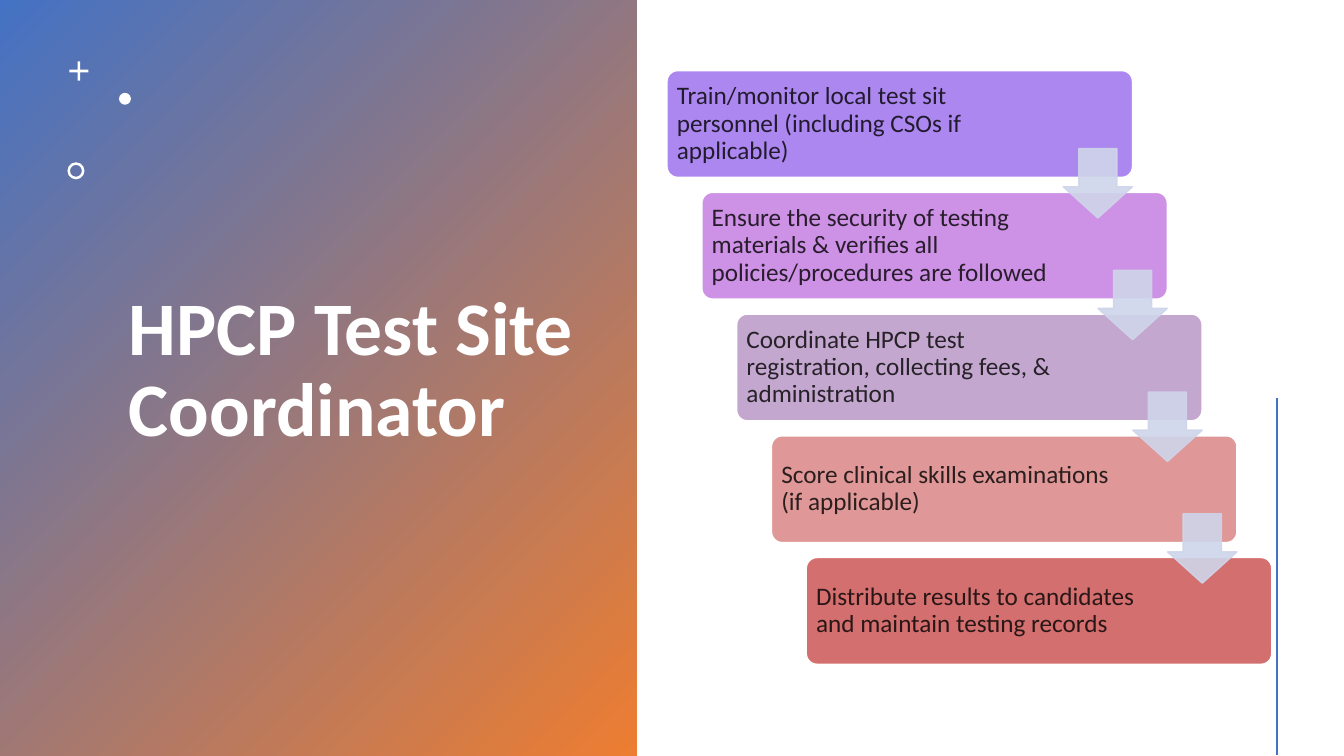
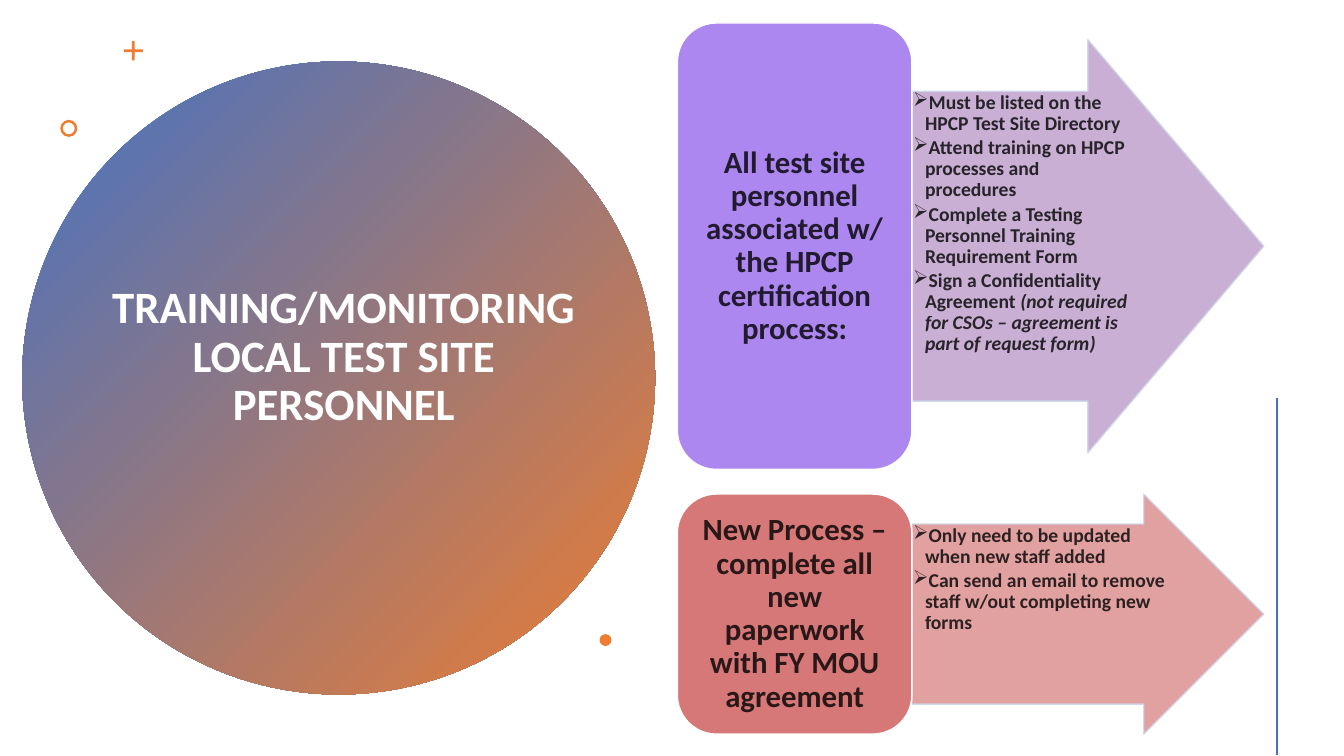
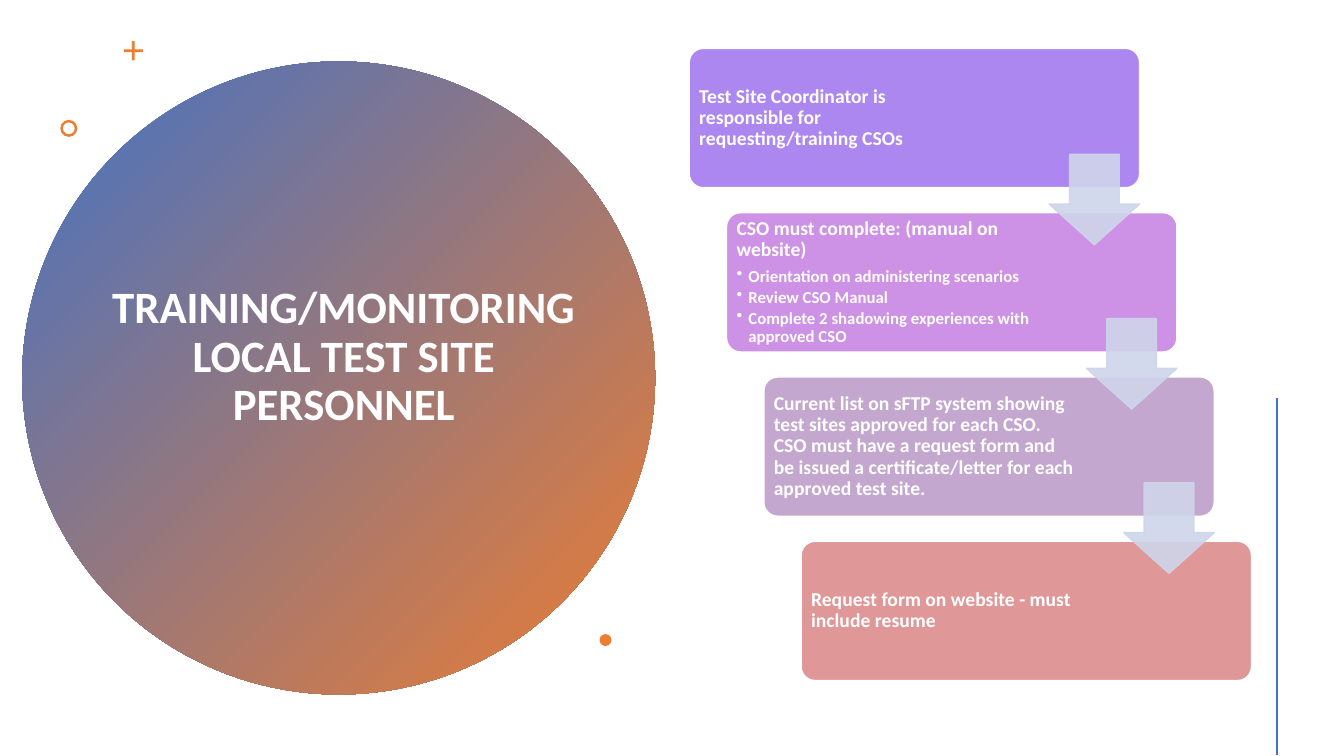
from lxml import etree
from pptx import Presentation
from pptx.dml.color import RGBColor
from pptx.enum.shapes import MSO_CONNECTOR, MSO_SHAPE
from pptx.enum.text import MSO_ANCHOR, PP_ALIGN
from pptx.oxml.ns import qn
from pptx.util import Cm, Pt

RECTANGLE = MSO_SHAPE.RECTANGLE
CARD = MSO_SHAPE.ROUNDED_RECTANGLE
OVAL = MSO_SHAPE.OVAL
RING = MSO_SHAPE.DONUT
PLUS = MSO_SHAPE.CROSS
DOWN_ARROW = MSO_SHAPE.DOWN_ARROW
RIGHT_ARROW = MSO_SHAPE.RIGHT_ARROW
STRAIGHT = MSO_CONNECTOR.STRAIGHT
TOP, MIDDLE = MSO_ANCHOR.TOP, MSO_ANCHOR.MIDDLE
LEFT, CENTER = PP_ALIGN.LEFT, PP_ALIGN.CENTER

FONT = "Calibri"
COLORS = {
    "blue": "4472C4",
    "orange": "ED7D31",
    "white": "FFFFFF",
    "black": "000000",
    "violet": "AC87EF",
    "orchid": "CD91E5",
    "mauve": "C4A7CF",
    "salmon": "DF9797",
    "rose": "D67878",
    "red": "D36F6F",
    "mist": "CFD5EA",
}
STEP_COLORS = ["violet", "orchid", "mauve", "salmon", "red"]
INDENT = Cm(0.3)


def rgb(name):
    return RGBColor.from_string(COLORS[name])


def set_alpha(element, percent):
    for color in element.iter(qn("a:srgbClr")):
        etree.SubElement(color, qn("a:alpha")).set("val", str(percent * 1000))


def add_shape(slide, kind, box, fill=None, line=None, adjustments=(), alpha=None):
    shape = slide.shapes.add_shape(kind, *(Cm(length) for length in box))
    shape.shadow.inherit = False
    for index, value in enumerate(adjustments):
        shape.adjustments[index] = value
    if fill:
        shape.fill.solid()
        shape.fill.fore_color.rgb = rgb(fill)
    if line:
        shape.line.color.rgb = rgb(line)
        shape.line.width = Pt(1)
    else:
        shape.line.fill.background()
    if alpha:
        set_alpha(shape._element.spPr, alpha)
    return shape


def set_frame(frame, anchor, insets):
    frame.word_wrap = True
    frame.vertical_anchor = anchor
    frame.margin_left, frame.margin_top, frame.margin_right, frame.margin_bottom = (
        Cm(inset) for inset in insets)


def write(paragraph, text, size, color, bold=False, align=LEFT, alpha=None,
          bullet=None, after=None, italic_tail=""):
    paragraph.alignment = align
    paragraph.line_spacing = 0.9
    if after:
        paragraph.space_after = Pt(after)
    properties = paragraph._p.get_or_add_pPr()
    if bullet:
        properties.set("marL", str(INDENT))
        properties.set("indent", str(-INDENT))
        etree.SubElement(properties, qn("a:buChar")).set("char", bullet)
    font = paragraph.font
    font.name = FONT
    font.size = Pt(size)
    font.bold = bold
    font.color.rgb = rgb(color)
    if alpha:
        set_alpha(properties, alpha)
    paragraph.add_run().text = text
    if italic_tail:
        tail = paragraph.add_run()
        tail.text = italic_tail
        tail.font.italic = True


def add_title(slide, box, text, size, align):
    frame = slide.shapes.add_textbox(*(Cm(length) for length in box)).text_frame
    set_frame(frame, MIDDLE, (0.25, 0.13, 0.25, 0.13))
    write(frame.paragraphs[0], text, size, "white", bold=True, align=align)


def add_gradient_panel(slide, kind, box):
    fill = add_shape(slide, kind, box).fill
    fill.gradient()
    fill.gradient_angle = 315
    for stop, color in zip(fill.gradient_stops, ("blue", "orange")):
        stop.color.rgb = rgb(color)


def add_marks(slide, color, plus, dot, ring):
    add_shape(slide, PLUS, (*plus, 0.48, 0.48), color, adjustments=[0.43])
    add_shape(slide, OVAL, (*dot, 0.3, 0.3), color)
    add_shape(slide, RING, (*ring, 0.43, 0.43), color, adjustments=[0.15])


def add_accent_line(slide):
    line = slide.shapes.add_connector(STRAIGHT, Cm(32.18), Cm(10.03), Cm(32.18), Cm(19.03))
    line.line.color.rgb = rgb("blue")
    line.line.width = Pt(2)
    etree.SubElement(line._element.spPr, qn("a:effectLst"))


def add_staircase(slide, box, card_size, steps, inset, arrow_drop, style):
    left, top, width, height = box
    card_width, card_height = card_size
    gaps = len(steps) - 1
    shift = (width - card_width) / gaps
    pitch = (height - card_height) / gaps
    arrow = 0.65 * card_height
    for index, (heading, *points) in enumerate(steps):
        card = add_shape(slide, CARD,
                         (left + index * shift, top + index * pitch, card_width, card_height),
                         STEP_COLORS[index], "white", [0.1])
        frame = card.text_frame
        right_inset = arrow + 1.09 + (0 if index else 0.18 * card_height)
        set_frame(frame, MIDDLE, (inset, inset, right_inset, inset))
        write(frame.paragraphs[0], heading, after=5 if points else None, **style)
        for number, point in enumerate(points, 1):
            write(frame.add_paragraph(), point, bullet="•",
                  after=2 if number < len(points) else None, **{**style, "size": 12})
    for index in range(gaps):
        add_shape(slide, DOWN_ARROW,
                  (left + index * shift + card_width - arrow,
                   top + index * pitch + arrow_drop * card_height, arrow, arrow),
                  "mist", "mist", [0.55, 0.45], alpha=90)


def add_callout(slide, box, arrow_height, label, label_color, arrow_color, points):
    left, top, width, height = box
    label_width = 0.4 * width
    arrow = add_shape(slide, RIGHT_ARROW,
                      (left + label_width, top + (height - arrow_height) / 2,
                       width - label_width, arrow_height),
                      arrow_color, "mist", [0.75, 0.5], alpha=90)
    frame = arrow.text_frame
    set_frame(frame, TOP, (0.03,) * 4)
    for index, (point, *tail) in enumerate(points):
        write(frame.add_paragraph() if index else frame.paragraphs[0], point, 14, "black",
              bold=True, alpha=80, bullet="➢",
              after=2 if index < len(points) - 1 else None, italic_tail="".join(tail))
    card = add_shape(slide, CARD, (left, top, label_width, height), label_color, "white")
    set_frame(card.text_frame, MIDDLE, (0.23, 0.13, 0.23, 0.13))
    write(card.text_frame.paragraphs[0], label, 22, "black", bold=True, align=CENTER, alpha=80)


def add_training_base(slide):
    add_gradient_panel(slide, OVAL, (0.56, 1.55, 15.95, 15.95))
    add_title(slide, (1.96, 2.57, 13.41, 12.88),
              "TRAINING/MONITORING LOCAL TEST SITE PERSONNEL", 32, CENTER)
    add_marks(slide, "orange", plus=(3.12, 1.04), dot=(15.11, 15.98), ring=(1.52, 3.02))
    add_accent_line(slide)


def build_coordinator(slide):
    add_gradient_panel(slide, RECTANGLE, (0, 0, 16.05, 19.05))
    add_title(slide, (3, 1.07, 12.19, 16.59), "HPCP Test Site Coordinator", 54, LEFT)
    add_marks(slide, "white", plus=(1.75, 1.55), dot=(3, 2.34), ring=(1.7, 4.09))
    add_accent_line(slide)
    duties = [
        ["Train/monitor local test sit personnel (including CSOs if applicable)"],
        ["Ensure the security of testing materials & verifies all policies/procedures are followed"],
        ["Coordinate HPCP test registration, collecting fees, & administration"],
        ["Score clinical skills examinations (if applicable)"],
        ["Distribute results to candidates and maintain testing records"],
    ]
    add_staircase(slide, (16.81, 1.78, 15.24, 14.96), (11.73, 2.69), duties, 0.17, 0.73,
                  {"size": 18, "color": "black", "alpha": 80})


def build_personnel(slide):
    add_training_base(slide)
    add_callout(slide, (17.07, 0.58, 14.78, 11.25), 10.41,
                "All test site personnel associated w/ the HPCP certification process:",
                "violet", "mauve", [
                    ["Must be listed on the HPCP Test Site Directory"],
                    ["Attend training on HPCP processes and procedures"],
                    ["Complete a Testing Personnel Training Requirement Form"],
                    ["Sign a Confidentiality Agreement ",
                     "(not required for CSOs – agreement is part of request form)"],
                ])
    add_callout(slide, (17.07, 12.45, 14.78, 6.05), 6.05,
                "New Process – complete all new paperwork with FY MOU agreement",
                "rose", "salmon", [
                    ["Only need to be updated when new staff added"],
                    ["Can send an email to remove staff w/out completing new forms"],
                ])


def build_cso_training(slide):
    add_training_base(slide)
    requirements = [
        ["Test Site Coordinator is responsible for requesting/training CSOs"],
        ["CSO must complete: (manual on website)",
         "Orientation on administering scenarios",
         "Review CSO Manual",
         "Complete 2 shadowing experiences with approved CSO"],
        ["Current list on sFTP system showing test sites approved for each CSO. "
         "CSO must have a request form and be issued a certificate/letter for each "
         "approved test site."],
        ["Request form on website - must include resume"],
    ]
    add_staircase(slide, (17.37, 1.22, 14.17, 15.93), (11.35, 3.51), requirements, 0.15, 0.76,
                  {"size": 14, "color": "white", "bold": True})


def main():
    deck = Presentation()
    deck.slide_width, deck.slide_height = Cm(33.87), Cm(19.05)
    for build in (build_coordinator, build_personnel, build_cso_training):
        build(deck.slides.add_slide(deck.slide_layouts[6]))
    deck.save("out.pptx")


if __name__ == "__main__":
    main()
